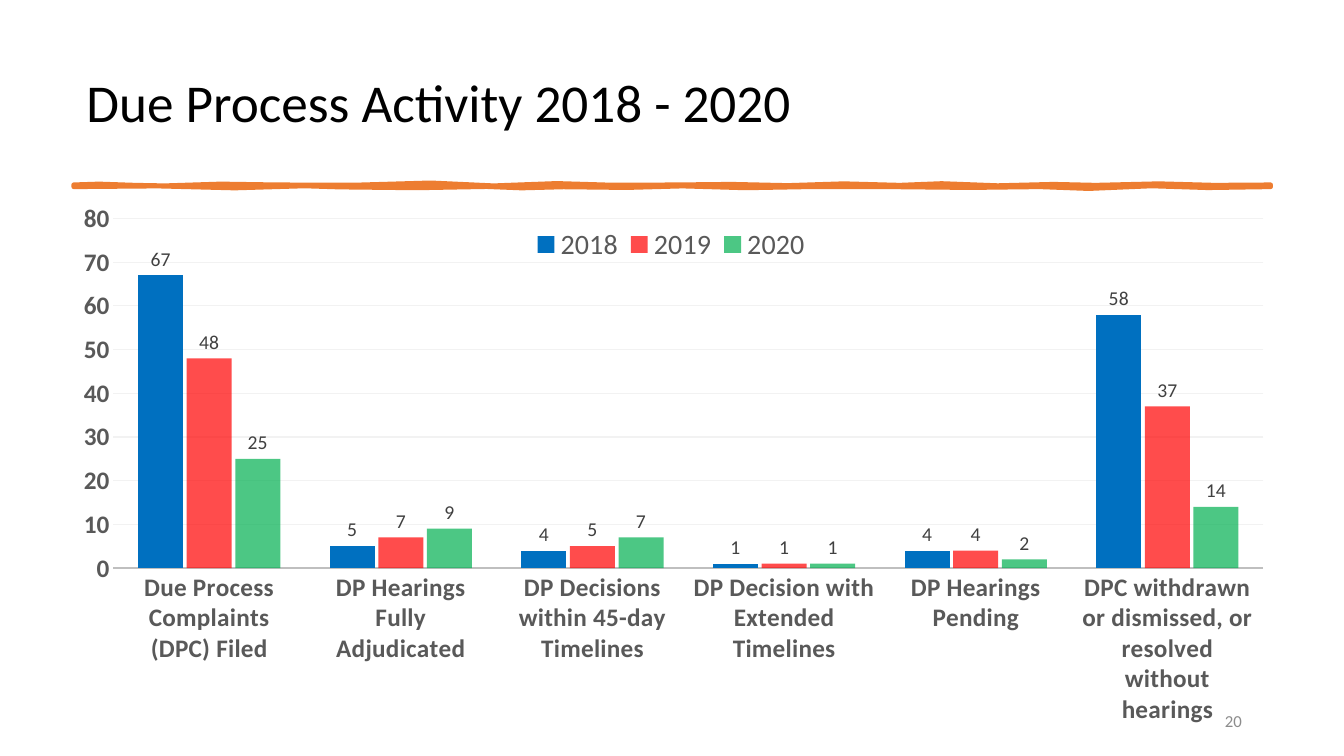
from dataclasses import dataclass

from lxml import etree
from pptx import Presentation
from pptx.chart.data import CategoryChartData
from pptx.dml.color import RGBColor
from pptx.enum.chart import XL_CHART_TYPE, XL_LABEL_POSITION, XL_LEGEND_POSITION, XL_TICK_MARK
from pptx.enum.text import MSO_ANCHOR, PP_ALIGN
from pptx.oxml.ns import qn
from pptx.util import Pt

COLUMNS = XL_CHART_TYPE.COLUMN_CLUSTERED
OUTSIDE = XL_LABEL_POSITION.OUTSIDE_END
BOTTOM = XL_LEGEND_POSITION.BOTTOM
NO_TICK = XL_TICK_MARK.NONE
MIDDLE = MSO_ANCHOR.MIDDLE
LEFT, RIGHT = PP_ALIGN.LEFT, PP_ALIGN.RIGHT


@dataclass(frozen=True)
class Theme:
    """Fonts, colours and type sizes of the slide."""
    font: str = "Calibri"
    title: str = "000000"
    accent: str = "ED7D31"
    number: str = "8C8C8C"
    axis_text: str = "595959"
    label: str = "404040"
    axis: str = "BFBFBF"
    grid: str = "F2F2F2"
    title_size: float = 38
    number_size: float = 12
    axis_size: float = 18
    legend_size: float = 20
    label_size: float = 14
    category_spacing: int = 20


THEME = Theme()

CATEGORIES = [
    "Due Process Complaints (DPC) Filed",
    "DP Hearings Fully Adjudicated",
    "DP Decisions within 45-day Timelines",
    "DP Decision with Extended Timelines",
    "DP Hearings Pending",
    "DPC withdrawn or dismissed, or resolved without hearings",
]
SERIES = [
    ("2018", (67, 5, 4, 1, 4, 58), "0070C0", 100),
    ("2019", (48, 7, 5, 1, 4, 37), "FF0000", 70),
    ("2020", (25, 9, 7, 1, 2, 14), "00B050", 70),
]
TOP_EDGE = [(0, 0), (18, -0.6), (44, 0.3), (65, 0.7), (105, -0.6), (145, 0),
            (200, 0.2), (255, -1.4), (300, 0.7), (345, -1), (385, 0.2),
            (430, 0), (470, -0.4), (510, 0.5), (550, -0.8), (590, 0.3),
            (620, -0.9), (660, 0.6), (700, -0.4), (730, 0.3), (775, -0.8),
            (815, 0.3), (855, 0)]
BOTTOM_EDGE = [(855, 1.5), (810, 2.2), (770, 0.9), (725, 2.8), (690, 1.5),
               (640, 2.1), (590, 1.6), (525, 1.5), (480, 2.3), (435, 1),
               (395, 2.1), (350, 1.6), (320, 2.4), (295, 1.4), (245, 2.3),
               (190, 1.7), (165, 0.9), (115, 2.4), (60, 1), (0, 1.5)]


def rgb(value):
    """Return a colour from its hex form."""
    return RGBColor.from_string(value)


def style_font(font, size, color, bold=False):
    """Apply the theme font with a size, colour and weight."""
    font.name = THEME.font
    font.size = Pt(size)
    font.bold = bold
    font.color.rgb = rgb(color)


def add_text(slide, box, text, size, color, align, spacing=1.0, after=0):
    """Place one line of text, centred vertically in its box."""
    tf = slide.shapes.add_textbox(*map(Pt, box)).text_frame
    tf.word_wrap = True
    tf.vertical_anchor = MIDDLE
    p = tf.paragraphs[0]
    p.text = text
    p.alignment = align
    p.line_spacing = spacing
    p.space_after = Pt(after)
    style_font(p.runs[0].font, size, color)


def add_brush_rule(slide, left, top):
    """Draw the hand-drawn rule below the title."""
    points = [(Pt(left + x), Pt(top + y)) for x, y in TOP_EDGE + BOTTOM_EDGE]
    builder = slide.shapes.build_freeform(*points[0])
    builder.add_line_segments(points[1:], close=True)
    sp = builder.convert_to_shape()
    sp.shadow.inherit = False
    sp.fill.solid()
    sp.fill.fore_color.rgb = rgb(THEME.accent)
    sp.line.color.rgb = rgb(THEME.accent)
    sp.line.width = Pt(3.25)


def set_layout(parent, index, box, inner=False):
    """Give a chart part a manual layout in fractions of the chart."""
    for old in parent.findall(qn("c:layout")):
        parent.remove(old)
    layout = etree.Element(qn("c:layout"))
    manual = etree.SubElement(layout, qn("c:manualLayout"))
    settings = [("layoutTarget", "inner")] if inner else []
    settings += [("xMode", "edge"), ("yMode", "edge"), *zip("xywh", box)]
    for tag, value in settings:
        etree.SubElement(manual, qn(f"c:{tag}")).set("val", str(value))
    parent.insert(index, layout)


def style_series(series, color, opacity):
    """Colour one series and label its columns."""
    fill = series.format.fill
    fill.solid()
    fill.fore_color.rgb = rgb(color)
    if opacity < 100:
        clr = series._element.find(".//" + qn("a:srgbClr"))
        etree.SubElement(clr, qn("a:alpha")).set("val", str(opacity * 1000))
    labels = series.data_labels
    labels.show_value = True
    labels.position = OUTSIDE
    style_font(labels.font, THEME.label_size, THEME.label)


def style_axes(chart):
    """Style both axes and the gridlines."""
    for axis in (chart.category_axis, chart.value_axis):
        axis.major_tick_mark = axis.minor_tick_mark = NO_TICK
        style_font(axis.tick_labels.font, THEME.axis_size, THEME.axis_text, bold=True)
    categories = chart.category_axis
    text_props = categories._element.find(".//" + qn("a:defRPr"))
    text_props.set("spc", str(THEME.category_spacing))
    line = categories.format.line
    line.color.rgb = rgb(THEME.axis)
    line.width = Pt(1.25)
    values = chart.value_axis
    values.minimum_scale, values.maximum_scale, values.major_unit = 0, 80, 10
    values.format.line.fill.background()
    values.has_major_gridlines = True
    grid = values.major_gridlines.format.line
    grid.color.rgb = rgb(THEME.grid)
    grid.width = Pt(0.75)


def add_activity_chart(slide, box):
    """Place the column chart of yearly activity in its box."""
    data = CategoryChartData()
    data.categories = CATEGORIES
    for name, values, *_ in SERIES:
        data.add_series(name, values)
    chart = slide.shapes.add_chart(COLUMNS, *map(Pt, box), data).chart
    chart.has_title = False
    style_font(chart.font, 10, THEME.title)
    style_axes(chart)
    plot = chart.plots[0]
    plot.gap_width, plot.overlap, plot.vary_by_categories = 110, -8, False
    for series, (_, _, color, opacity) in zip(plot.series, SERIES):
        style_series(series, color, opacity)
    chart.has_legend = True
    legend = chart.legend
    legend.position = BOTTOM
    legend.include_in_layout = False
    style_font(legend.font, THEME.legend_size, THEME.axis_text)
    set_layout(legend._element, 1, (0.38, 0.057, 0.24, 0.07))
    plot_area = chart._chartSpace.find(".//" + qn("c:plotArea"))
    set_layout(plot_area, 0, (0.043, 0.045, 0.942, 0.635), inner=True)


def main():
    """Build the slide and save it."""
    prs = Presentation()
    prs.slide_width, prs.slide_height = Pt(960), Pt(540)
    s = prs.slides.add_slide(prs.slide_layouts[6])
    add_text(s, (54.7, 23.8, 839.5, 103), "Due Process Activity 2018 - 2020",
             THEME.title_size, THEME.title, LEFT, spacing=0.9)
    add_brush_rule(s, 52.6, 132)
    add_text(s, (678.2, 500.4, 216, 28.8), "20",
             THEME.number_size, THEME.number, RIGHT, after=6)
    add_activity_chart(s, (43.5, 138.5, 871.9, 393.1))
    prs.save("out.pptx")


if __name__ == "__main__":
    main()
